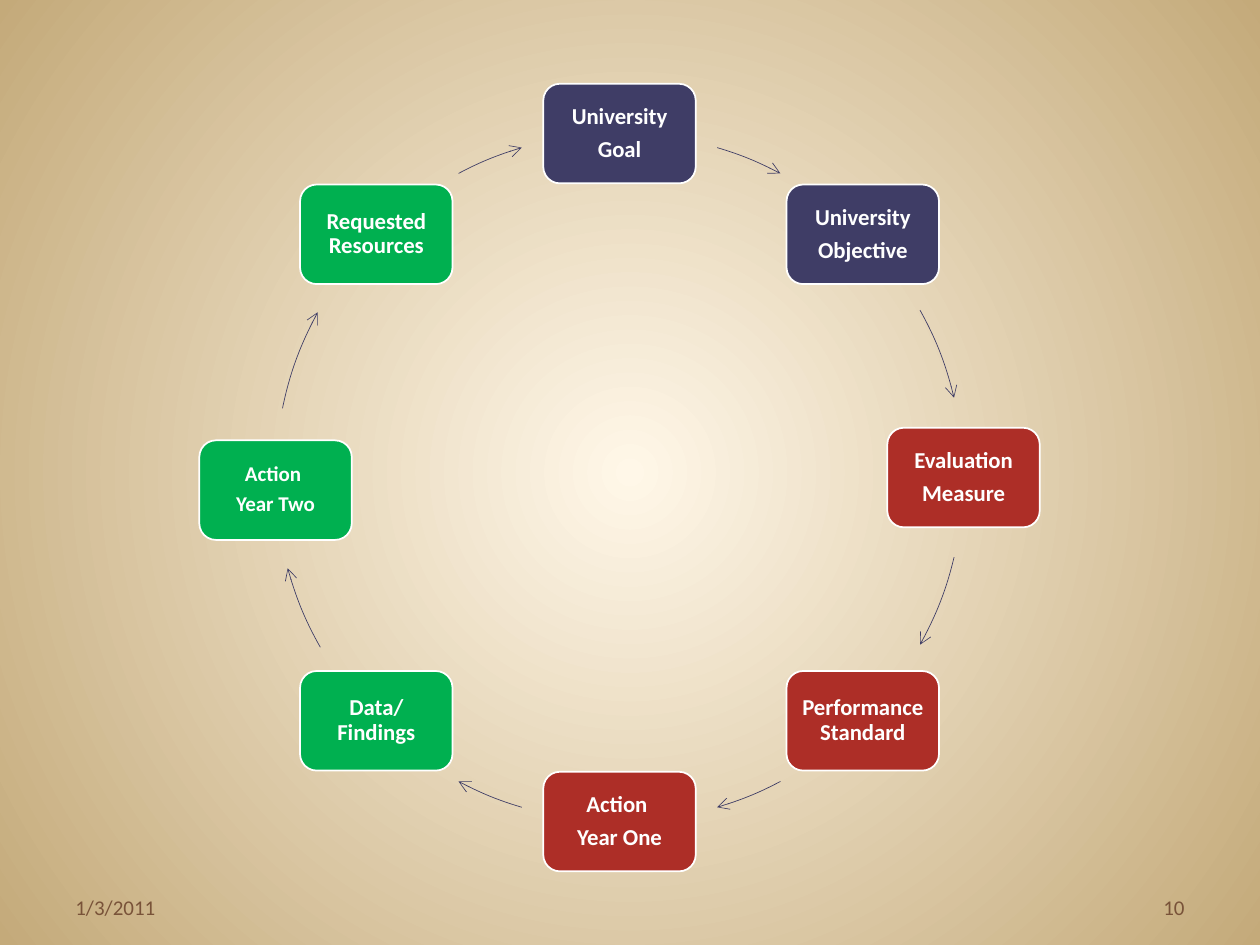
"""Build a slide with a ring of eight planning steps joined by curved arrows."""
from math import cos, radians, sin

from lxml import etree
from pptx import Presentation
from pptx import util as u
from pptx.dml.color import RGBColor
from pptx.enum import shapes, text
from pptx.oxml import ns

COLUMNS, ROWS = 100, 75
CELL = u.Inches(0.1)
CENTER_X, CENTER_Y, RADIUS = 49.17, 37.9, 27.3
BOX_WIDTH, BOX_HEIGHT = 12.1, 7.9
FONT = "Calibri"

WHITE = RGBColor(0xFF, 0xFF, 0xFF)
CREAM = RGBColor(0xFF, 0xF7, 0xE8)
SAND = RGBColor(0xC4, 0xAA, 0x7A)
BROWN = RGBColor(0x79, 0x53, 0x39)
NAVY = RGBColor(0x3F, 0x3D, 0x66)
RED = RGBColor(0xAD, 0x2E, 0x27)
GREEN = RGBColor(0x00, 0xB0, 0x50)

# label, fill, font size, drop below the ring
STEPS = [
    ("University\nGoal", NAVY, 13, 0),
    ("University\nObjective", NAVY, 13, 0),
    ("Evaluation\nMeasure", RED, 13, 0),
    ("Performance Standard", RED, 13, 0),
    ("Action \nYear One", RED, 13, 0),
    ("Data/ Findings", GREEN, 13, 0),
    ("Action \nYear Two", GREEN, 12, 1),
    ("Requested Resources", GREEN, 13, 0),
]
# start and end in degrees clockwise from the top of the ring
ARROWS = [
    (16.5, 27.9), (60.9, 76.6), (103.4, 119.1), (152.1, 163.5),
    (196.5, 207.9), (240.4, 254.7), (281.6, 298.7), (332.1, 343.5),
]


def cells(*counts):
    """Turn counts of grid cells into slide lengths."""
    return [round(count * CELL) for count in counts]


def paint_background(page):
    """Fill the page with a gradient that spreads from its middle."""
    fill = page.background.fill
    fill.gradient()
    for stop, color in zip(fill.gradient_stops, (CREAM, SAND)):
        stop.color.rgb = color
    gradient = page.element.find(".//" + ns.qn("a:gradFill"))
    gradient.remove(gradient.find(ns.qn("a:lin")))
    spread = etree.SubElement(gradient, ns.qn("a:path"), path="circle")
    etree.SubElement(spread, ns.qn("a:fillToRect"),
                     l="50000", t="50000", r="50000", b="50000")


def write(shape, words, size, color, align, bold=False):
    """Put formatted words into a shape."""
    frame = shape.text_frame
    frame.word_wrap = True
    frame.text = words
    for para in frame.paragraphs:
        para.alignment = align
        for span in para.runs:
            span.font.name = FONT
            span.font.size = u.Pt(size)
            span.font.bold = bold
            span.font.color.rgb = color
    return frame


def add_step(page, angle, label, color, size, drop):
    """Place one step box on the ring."""
    left = CENTER_X + RADIUS * sin(radians(angle)) - BOX_WIDTH / 2
    top = CENTER_Y - RADIUS * cos(radians(angle)) - BOX_HEIGHT / 2 + drop
    box = page.shapes.add_shape(shapes.MSO_SHAPE.ROUNDED_RECTANGLE,
                                *cells(left, top, BOX_WIDTH, BOX_HEIGHT))
    box.shadow.inherit = False
    box.fill.solid()
    box.fill.fore_color.rgb = color
    box.line.color.rgb = WHITE
    box.line.width = u.Pt(1)
    frame = write(box, label, size, WHITE, text.PP_ALIGN.CENTER, bold=True)
    frame.vertical_anchor = text.MSO_ANCHOR.MIDDLE
    frame.margin_left = frame.margin_right = u.Inches(0.05)
    frame.margin_top = frame.margin_bottom = u.Inches(0.05)
    for para in frame.paragraphs:
        para.line_spacing = 0.9
        para.space_after = u.Pt(0.35 * size)


def add_arrow(page, start, end):
    """Draw one curved arrow along the ring."""
    arc = page.shapes.add_shape(
        shapes.MSO_SHAPE.ARC,
        *cells(CENTER_X - RADIUS, CENTER_Y - RADIUS, 2 * RADIUS, 2 * RADIUS))
    arc.shadow.inherit = False
    for index, angle in enumerate((start, end)):
        arc.adjustments[index] = (angle - 90) % 360 * 0.6
    arc.fill.background()
    arc.line.color.rgb = NAVY
    arc.line.width = u.Pt(0.39)
    line = arc.element.spPr.find(ns.qn("a:ln"))
    etree.SubElement(line, ns.qn("a:tailEnd"), type="arrow")


def add_footer(page, left, words, align):
    """Add a small text at the foot of the page."""
    box = page.shapes.add_textbox(*cells(left, 68.3, 23.3, 5.2))
    frame = write(box, words, 12, BROWN, align)
    frame.vertical_anchor = text.MSO_ANCHOR.BOTTOM


def main():
    """Build and save the deck."""
    deck = Presentation()
    deck.slide_width, deck.slide_height = cells(COLUMNS, ROWS)
    page = deck.slides.add_slide(deck.slide_layouts.get_by_name("Blank"))
    paint_background(page)
    for index, (step, arrow) in enumerate(zip(STEPS, ARROWS)):
        add_step(page, index * 360 / len(STEPS), *step)
        add_arrow(page, *arrow)
    add_footer(page, 5, "1/3/2011", text.PP_ALIGN.LEFT)
    add_footer(page, 71.7, "10", text.PP_ALIGN.RIGHT)
    deck.save("out.pptx")


if __name__ == "__main__":
    main()
